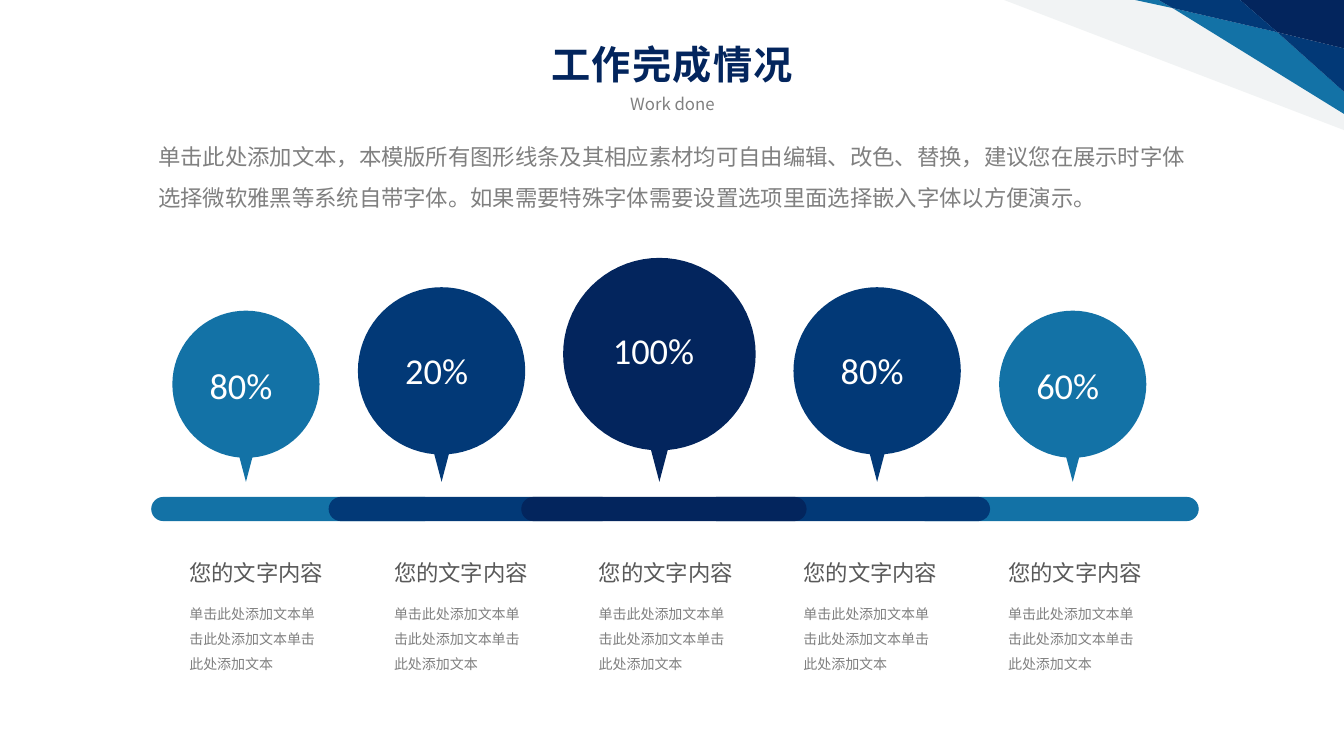
"""Build the work completion slide with five pins over a segmented bar."""
from math import cos, radians, sin

from lxml import etree
from pptx import Presentation
from pptx import util as u
from pptx.dml.color import RGBColor
from pptx.enum import shapes, text
from pptx.oxml.ns import qn

SKY, BLUE, NAVY = "1372A6", "023977", "03255D"
PALE, WHITE, GREY, DARK = "F1F3F4", "FFFFFF", "808080", "595959"
CJK = "Noto Sans CJK SC"

deck = Presentation()
deck.slide_width, deck.slide_height = u.Inches(13.33), u.Inches(7.5)
slide = deck.slides.add_slide(deck.slide_layouts[5])
items = slide.shapes


def paint(shape, tone):
    shape.shadow.inherit = False
    shape.fill.solid()
    shape.fill.fore_color.rgb = RGBColor.from_string(tone)
    shape.line.fill.background()


def write(words, left, top, wide, high, size, tone=GREY, font=CJK, bold=False,
          wrap=True, align=text.PP_ALIGN.LEFT, lines=1.0, before=0, gap=0, box=None):
    box = box or items.add_textbox(0, 0, 0, 0)
    box.left, box.top = u.Inches(left), u.Inches(top)
    box.width, box.height = u.Inches(wide), u.Inches(high)
    frame = box.text_frame
    frame.word_wrap = wrap
    frame.auto_size = text.MSO_AUTO_SIZE.NONE
    frame.vertical_anchor = text.MSO_ANCHOR.TOP
    para = frame.paragraphs[0]
    para.alignment, para.line_spacing = align, lines
    para.space_before = u.Pt(before)
    run = para.add_run()
    run.text = words
    run.font.size, run.font.bold, run.font.name = u.Pt(size), bold, font
    run.font.color.rgb = RGBColor.from_string(tone)
    props = run.font._element
    etree.SubElement(props, qn("a:ea")).set("typeface", font)
    if gap:
        props.set("spc", str(gap * 100))


facets = [
    (PALE, [(9.96, 0), (13.33, 1.29), (13.33, 0)]),
    (SKY, [(11.26, 0), (11.63, 0.08), (11.49, 0)]),
    (SKY, [(11.63, 0.08), (13.33, 1.13), (13.33, 0.91), (12.67, 0.32)]),
    (BLUE, [(12.67, 0.32), (13.33, 0.91), (13.33, 0.48)]),
    (NAVY, [(12.3, 0), (12.67, 0.32), (13.33, 0.48), (13.33, 0)]),
    (BLUE, [(11.49, 0), (11.63, 0.08), (12.67, 0.32), (12.3, 0)]),
]

pins = [
    ("80%", 2.44, 1.46, 3.55, SKY),
    ("20%", 4.38, 1.66, 3.4, BLUE),
    ("100%", 6.54, 1.91, 3.21, NAVY),
    ("80%", 8.7, 1.66, 3.4, BLUE),
    ("60%", 10.64, 1.46, 3.55, SKY),
]
tip = 4.78
outlines = list(facets)
for label, mid, wide, top, tone in pins:
    half = wide / 2
    hub = tip - 1.163 * wide + half
    ring = [(mid + half * cos(radians(a)), hub + half * sin(radians(a)))
            for a in range(95, 446, 5)]
    outlines.append((tone, ring + [(mid, tip)]))

for tone, dots in outlines:
    spots = [(u.Inches(x), u.Inches(y)) for x, y in dots]
    pen = items.build_freeform(*spots[0])
    pen.add_line_segments(spots[1:], close=True)
    paint(pen.convert_to_shape(), tone)

for label, mid, wide, top, tone in pins:
    room = 0.92 if len(label) == 3 else 1.12
    write(label, mid - room / 2, top, room, 0.54, 26, WHITE, "Calibri", wrap=False)

bars = [(9.06, SKY), (6.99, BLUE), (1.5, SKY), (3.26, BLUE), (5.17, NAVY)]
for left, tone in bars:
    bar = items.add_shape(shapes.MSO_SHAPE.ROUNDED_RECTANGLE, u.Inches(left),
                          u.Inches(4.93), u.Inches(2.83), u.Inches(0.24))
    bar.adjustments[0] = 0.5
    paint(bar, tone)

write("工作完成情况", 0, 0.35, 13.33, 0.57, 28, NAVY, bold=True, gap=1,
      align=text.PP_ALIGN.CENTER, box=items.title)
write("Work done", 5.04, 0.88, 3.26, 0.3, 12, align=text.PP_ALIGN.CENTER)
write("单击此处添加文本，本模版所有图形线条及其相应素材均可自由编辑、改色、替换，"
      "建议您在展示时字体选择微软雅黑等系统自带字体。如果需要特殊字体需要设置选项里面"
      "选择嵌入字体以方便演示。", 1.47, 1.24, 10.42, 0.91, 16, lines=1.5)

for col in range(len(pins)):
    left = 1.78 + 2.03 * col
    write("您的文字内容", left, 5.5, 1.53, 0.37, 16, DARK, wrap=False)
    write("单击此处添加文本" * 3, left, 5.87, 1.53, 0.88, 10, lines=1.5, before=13.3)

deck.save("out.pptx")
